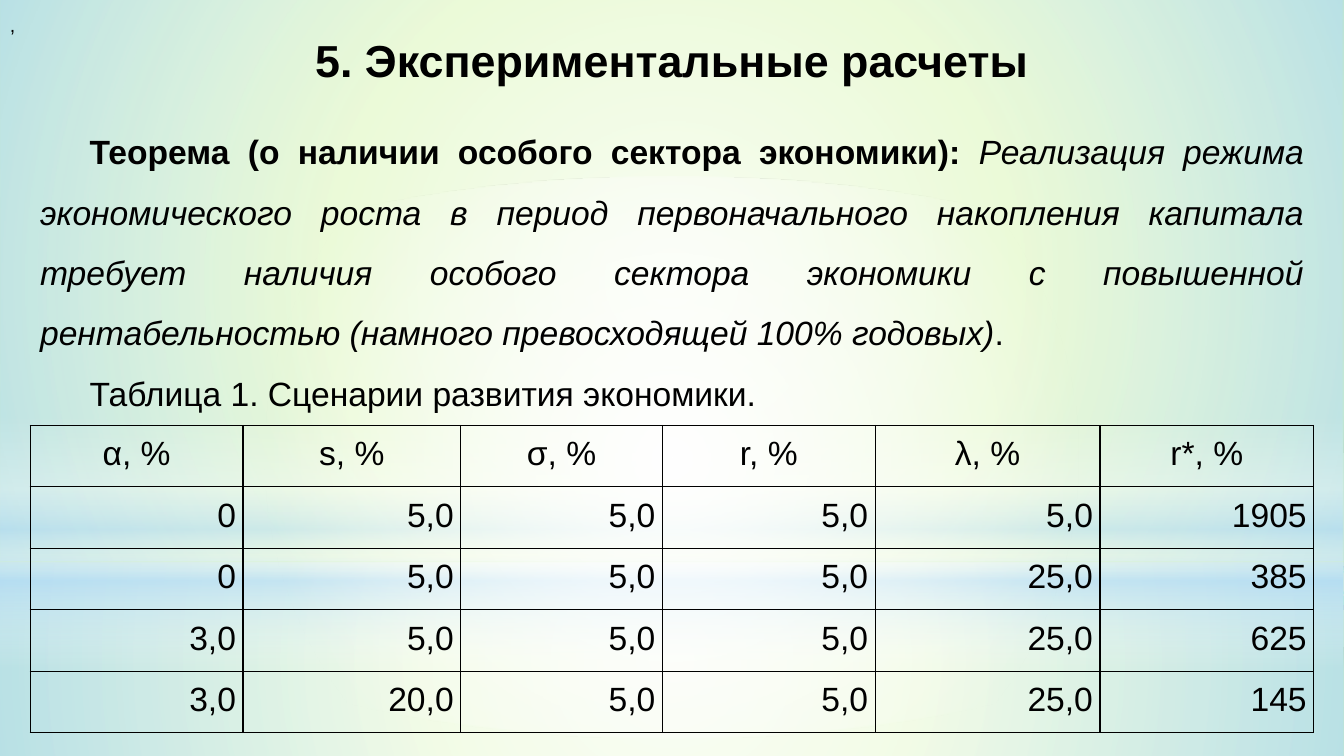
from dataclasses import dataclass

from lxml import etree
from pptx import Presentation
from pptx.dml.color import RGBColor
from pptx.enum.shapes import MSO_SHAPE
from pptx.enum.text import MSO_ANCHOR, MSO_AUTO_SIZE, PP_ALIGN
from pptx.oxml.ns import qn
from pptx.slide import Slide
from pptx.table import _Cell
from pptx.text.text import TextFrame
from pptx.util import Pt

RECT, OVAL = MSO_SHAPE.RECTANGLE, MSO_SHAPE.OVAL
LEFT, CENTER, RIGHT, FULL = PP_ALIGN.LEFT, PP_ALIGN.CENTER, PP_ALIGN.RIGHT, PP_ALIGN.JUSTIFY
MIDDLE, TOP = MSO_ANCHOR.MIDDLE, MSO_ANCHOR.TOP
FIXED = MSO_AUTO_SIZE.NONE
SCALE = 9144
WIDE, HIGH = 1333, 750


@dataclass(frozen=True)
class Theme:
    font: str = "Arial"
    ink: str = "000000"
    back: str = "CAF297"
    white: str = "FFFFFF"
    blue: str = "B4DCFA"
    title: int = 32
    body: int = 24
    mark: int = 14
    rule: int = 1


THEME = Theme()


@dataclass(frozen=True)
class Stop:
    place: int
    color: str
    alpha: int = 100


@dataclass(frozen=True)
class Wash:
    kind: MSO_SHAPE
    top: int
    high: int
    stops: tuple[Stop, ...]
    round: bool = True


@dataclass(frozen=True)
class Run:
    text: str
    bold: bool = False
    slant: bool = False


W, B = THEME.white, THEME.blue
WASHES = (
    Wash(RECT, 558, 192, (Stop(0, W, 91), Stop(37, W, 76), Stop(100, B, 79))),
    Wash(RECT, 0, 558, (Stop(0, W, 89), Stop(48, W, 62), Stop(100, B, 79))),
    Wash(RECT, 412, 250, (Stop(0, W, 0), Stop(29, W, 30), Stop(45, B, 40),
                          Stop(55, W, 26), Stop(65, B, 60), Stop(100, W, 0)), round=False),
    Wash(OVAL, 175, 558, (Stop(0, W), Stop(56, W, 0))),
)
TITLE = Run("5. Экспериментальные расчеты", bold=True)
THEOREM = (
    Run("Теорема (о наличии особого сектора экономики): ", bold=True),
    Run("Реализация режима экономического роста в период первоначального накопления "
        "капитала требует наличия особого сектора экономики с повышенной "
        "рентабельностью (намного превосходящей 100% годовых)", slant=True),
    Run("."),
)
CAPTION = Run("Таблица 1. Сценарии развития экономики.")
ROWS = (
    ("α, %", "s, %", "σ, %", "r, %", "λ, %", "r*, %"),
    ("0", "5,0", "5,0", "5,0", "5,0", "1905"),
    ("0", "5,0", "5,0", "5,0", "25,0", "385"),
    ("3,0", "5,0", "5,0", "5,0", "25,0", "625"),
    ("3,0", "20,0", "5,0", "5,0", "25,0", "145"),
)
COLS = (211, 216, 200, 211, 223, 212)
ROW = 61


def px(*sizes: int) -> list[int]:
    return [size * SCALE for size in sizes]


def write(frame: TextFrame, *lines: tuple[Run, ...], size: int = THEME.body,
          align: PP_ALIGN = LEFT, space: float | Pt = 1.0, indent: int = 0) -> None:
    for i, runs in enumerate(lines):
        para = frame.add_paragraph() if i else frame.paragraphs[0]
        para.alignment = align
        para.line_spacing = space
        if indent:
            para._p.get_or_add_pPr().set("indent", str(indent * SCALE))
        for item in runs:
            run = para.add_run()
            run.text = item.text
            font = run.font
            font.name, font.size = THEME.font, Pt(size)
            font.bold, font.italic = item.bold, item.slant
            font.color.rgb = RGBColor.from_string(THEME.ink)


def setup(frame: TextFrame, anchor: MSO_ANCHOR) -> TextFrame:
    frame.word_wrap = True
    frame.auto_size = FIXED
    frame.vertical_anchor = anchor
    return frame


def paint(slide: Slide, wash: Wash) -> None:
    shape = slide.shapes.add_shape(wash.kind, *px(0, wash.top, WIDE, wash.high))
    shape.shadow.inherit = False
    shape.line.fill.background()
    shape.fill.background()
    grad = etree.Element(qn("a:gradFill"), rotWithShape="1")
    stops = etree.SubElement(grad, qn("a:gsLst"))
    for stop in wash.stops:
        point = etree.SubElement(stops, qn("a:gs"), pos=str(stop.place * 1000))
        color = etree.SubElement(point, qn("a:srgbClr"), val=stop.color)
        etree.SubElement(color, qn("a:alpha"), val=str(stop.alpha * 1000))
    if wash.round:
        focus = etree.SubElement(grad, qn("a:path"), path="circle")
        etree.SubElement(focus, qn("a:fillToRect"), l="50000", t="50000", r="50000", b="50000")
    else:
        etree.SubElement(grad, qn("a:lin"), ang="5400000", scaled="0")
    props = shape.element.spPr
    props.replace(props.find(qn("a:noFill")), grad)


def frame_cell(cell: _Cell) -> None:
    props = cell._tc.get_or_add_tcPr()
    for side in ("lnL", "lnR", "lnT", "lnB"):
        line = etree.SubElement(props, qn(f"a:{side}"), w=str(Pt(THEME.rule)))
        fill = etree.SubElement(line, qn("a:solidFill"))
        etree.SubElement(fill, qn("a:srgbClr"), val=THEME.ink)
    cell.fill.background()
    cell.vertical_anchor = MIDDLE
    cell.margin_left, cell.margin_right, cell.margin_top, cell.margin_bottom = px(7, 7, 0, 0)


def add_grid(slide: Slide) -> None:
    place = px(30, 422, sum(COLS), ROW * len(ROWS))
    table = slide.shapes.add_table(len(ROWS), len(COLS), *place).table
    table.first_row = table.horz_banding = False
    for col, wide in zip(table.columns, px(*COLS)):
        col.width = wide
    for r, row in enumerate(ROWS):
        table.rows[r].height = ROW * SCALE
        for c, text in enumerate(row):
            cell = table.cell(r, c)
            frame_cell(cell)
            write(cell.text_frame, (Run(text),), align=RIGHT if r else CENTER, space=Pt(24))


def main() -> None:
    deck = Presentation()
    deck.slide_width, deck.slide_height = px(WIDE, HIGH)
    slide = deck.slides.add_slide(deck.slide_layouts[5])
    back = slide.background.fill
    back.solid()
    back.fore_color.rgb = RGBColor.from_string(THEME.back)
    for wash in WASHES:
        paint(slide, wash)

    title = slide.shapes.title
    title.element.getparent().append(title.element)
    title.left, title.top, title.width, title.height = px(0, 18, WIDE, 83)
    write(setup(title.text_frame, MIDDLE), (TITLE,), size=THEME.title, align=CENTER)

    body = slide.shapes.add_textbox(*px(30, 105, 1273, 313))
    write(setup(body.text_frame, TOP), THEOREM, (CAPTION,), align=FULL, space=1.5, indent=49)

    mark = slide.shapes.add_textbox(*px(0, 8, WIDE, 32))
    write(setup(mark.text_frame, MIDDLE), (Run(","),), size=THEME.mark)

    add_grid(slide)
    deck.save("out.pptx")


if __name__ == "__main__":
    main()
